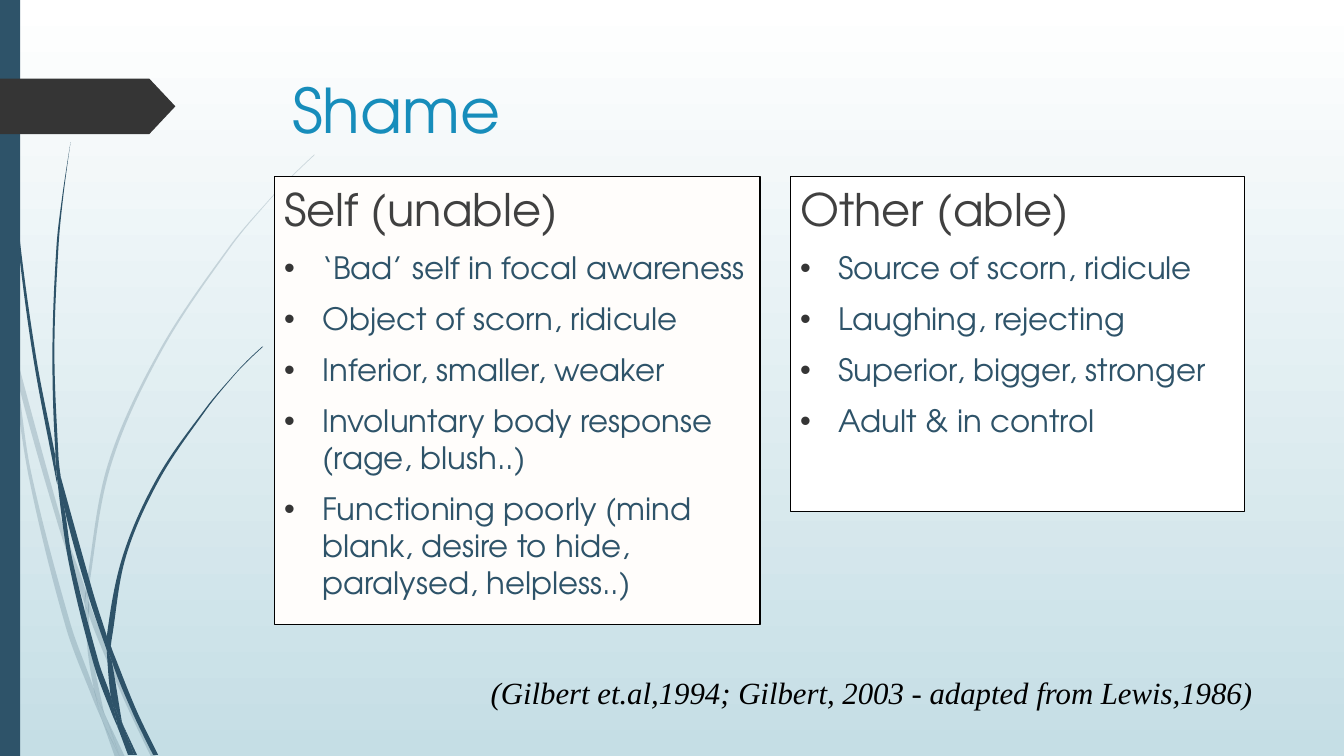
from dataclasses import dataclass

from lxml import etree
from pptx import Presentation
from pptx.dml.color import RGBColor
from pptx.enum.shapes import MSO_SHAPE
from pptx.enum.text import MSO_ANCHOR, PP_ALIGN
from pptx.oxml.ns import qn
from pptx.util import Emu, Pt

PX = 9144  # 100 px to the inch
HIGH = 750
WIDE = HIGH * 16 / 9
RECT, ARROW = MSO_SHAPE.RECTANGLE, MSO_SHAPE.PENTAGON
TOP, LEFT, RIGHT = MSO_ANCHOR.TOP, PP_ALIGN.LEFT, PP_ALIGN.RIGHT


@dataclass(frozen=True)
class Theme:
    sans: str = "TeX Gyre Adventor"
    serif: str = "Times New Roman"
    sky: tuple = ("FFFFFF", "C5DEE5")
    navy: str = "2E5369"
    coal: str = "353535"
    blue: str = "178DBB"
    gray: str = "404040"
    black: str = "000000"
    cream: str = "FFFDFB"
    white: str = "FFFFFF"
    title: int = 44
    head: int = 32
    body: int = 22


THEME = Theme()

# Blades of grass: each outline is a ring of (x, y) knots
PALE = [
    [(11, 350), (9, 322), (0, 282), (0, 299), (10, 344)],
    [(58, 522), (84, 599), (85, 586), (62, 520), (14, 345), (17, 376)],
    [(92, 607), (88, 596), (88, 610), (123, 694), (150, 751), (155, 751),
     (127, 692)],
    [(119, 751), (124, 751), (105, 711)],
    [(93, 683), (70, 619), (31, 469), (17, 376), (11, 350), (28, 470),
     (65, 621), (92, 693), (101, 714), (99, 707)],
    [(84, 599), (87, 646), (93, 683), (96, 692), (105, 711), (103, 706),
     (91, 646), (88, 610), (88, 608)],
    [(88, 584), (110, 462), (160, 349), (229, 245), (268, 198), (290, 175),
     (312, 154), (312, 153), (289, 175), (268, 197), (228, 244), (158, 348),
     (107, 461), (85, 584), (85, 586), (88, 596)],
    [(101, 714), (114, 751), (119, 751)],
    [(88, 608), (88, 610), (88, 596), (85, 586), (84, 599)],
    [(96, 692), (93, 683), (99, 707), (101, 714), (119, 751), (105, 711)],
]
DARK = [
    [(7, 110), (17, 233), (33, 355), (56, 477), (57, 481), (55, 457),
     (55, 453), (36, 355), (19, 232), (8, 109), (5, 48), (4, 0), (3, 0),
     (4, 48)],
    [(88, 592), (106, 645), (106, 633), (106, 631), (93, 590), (60, 472),
     (64, 505)],
    [(113, 649), (110, 641), (111, 656), (132, 708), (152, 749), (157, 749),
     (136, 706)],
    [(110, 691), (98, 657), (72, 556), (64, 505), (57, 477), (68, 557),
     (93, 659), (111, 708), (117, 722), (116, 717)],
    [(60, 472), (58, 453), (54, 349), (58, 245), (63, 193), (70, 141),
     (62, 193), (56, 245), (52, 349), (55, 449)],
    [(133, 749), (136, 749), (122, 719)],
    [(57, 477), (64, 505), (60, 472), (55, 449), (55, 453)],
    [(111, 633), (125, 552), (158, 476), (205, 406), (231, 374), (245, 359),
     (261, 344), (260, 344), (245, 358), (231, 373), (204, 405), (156, 474),
     (122, 551), (106, 631), (110, 641)],
    [(117, 722), (127, 749), (131, 749)],
    [(106, 645), (110, 691), (116, 706), (122, 719), (121, 716), (111, 656),
     (109, 651)],
    [(106, 645), (109, 651), (111, 656), (110, 641), (106, 631), (106, 633)],
    [(116, 706), (110, 691), (116, 717), (117, 722), (130, 749), (133, 749),
     (122, 719)],
]

SELF = [
    "‘Bad’ self in focal awareness",
    "Object of scorn, ridicule",
    "Inferior, smaller, weaker",
    "Involuntary body response (rage, blush..)",
    "Functioning poorly (mind blank, desire to hide, paralysed, helpless..)",
]
OTHER = [
    "Source of scorn, ridicule",
    "Laughing, rejecting",
    "Superior, bigger, stronger",
    "Adult & in control",
]


def emu(*nums):
    return [Emu(round(n * PX)) for n in nums]


def rgb(code):
    return RGBColor.from_string(code)


def paint(shape, fill, line=None):
    shape.shadow.inherit = False
    shape.fill.solid()
    shape.fill.fore_color.rgb = rgb(fill)
    if line:
        shape.line.color.rgb = rgb(line)
        shape.line.width = Pt(0.75)
    else:
        shape.line.fill.background()
    return shape


def block(slide, kind, box, fill, line=None):
    return paint(slide.shapes.add_shape(kind, *emu(*box)), fill, line)


def write(para, text, size, color, font=THEME.sans, italic=False, align=LEFT):
    para.alignment = align
    run = para.add_run()
    run.text = text
    run.font.name, run.font.size = font, Pt(size)
    run.font.color.rgb, run.font.italic = rgb(color), italic


def bullet(para, color):
    props = para._p.get_or_add_pPr()
    indent = 38 * PX
    props.set("marL", str(indent))
    props.set("indent", str(-indent))
    tint = etree.SubElement(props, qn("a:buClr"))
    etree.SubElement(tint, qn("a:srgbClr"), val=color)
    etree.SubElement(props, qn("a:buFont"), typeface="Arial")
    etree.SubElement(props, qn("a:buChar"), char="•")


def slope(last, here, after):
    """Unit direction of the outline at a knot, or 0 at a sharp corner."""
    into, out = here - last, after - here
    if (into * out.conjugate()).real < 0.8 * abs(into) * abs(out):
        return 0
    return (after - last) / abs(after - last)


def bend(shape, ring):
    """Turn the straight sides of a closed outline into curves."""
    knots = [complex(x, y) * PX for x, y in ring]
    base = complex(shape.left, shape.top)
    count = len(knots)
    ways = [slope(knots[i - 1], knots[i], knots[(i + 1) % count])
            for i in range(count)]
    for i, side in enumerate(list(shape._element.iter(qn("a:lnTo")))):
        j = (i + 1) % count
        reach = abs(knots[j] - knots[i]) / 3
        side.tag = qn("a:cubicBezTo")
        for n, grip in enumerate((knots[i] + ways[i] * reach,
                                  knots[j] - ways[j] * reach)):
            spot = grip - base
            side.insert(n, etree.Element(
                qn("a:pt"), x=str(round(spot.real)), y=str(round(spot.imag))))


def blade(group, ring, alpha):
    points = [emu(*knot) for knot in ring]
    pen = group.shapes.build_freeform(*points[0], scale=1.0)
    pen.add_line_segments(points[1:] + points[:1], close=True)
    shape = paint(pen.convert_to_shape(), THEME.navy)
    if alpha < 100:
        tint = next(shape._element.spPr.iter(qn("a:srgbClr")))
        etree.SubElement(tint, qn("a:alpha"), val=str(alpha * 1000))
    bend(shape, ring)


def scene(slide):
    fill = slide.background.fill
    fill.gradient()
    fill.gradient_angle = 270
    for stop, color in zip(fill.gradient_stops, THEME.sky):
        stop.color.rgb = rgb(color)
    for rings, alpha in ((PALE, 20), (DARK, 100)):
        group = slide.shapes.add_group_shape()
        for ring in rings:
            blade(group, ring, alpha)
    block(slide, RECT, (0, 0, 20, HIGH), THEME.navy)
    arrow = block(slide, ARROW, (0, 78, 174, 55), THEME.coal)
    arrow.adjustments[0] = 0.47


def label(slide, box, text, wrap=True, **style):
    frame = slide.shapes.add_textbox(*emu(*box)).text_frame
    frame.word_wrap = wrap
    write(frame.paragraphs[0], text, **style)


def panel(slide, box, fill, head, items):
    frame = block(slide, RECT, box, fill, THEME.black).text_frame
    frame.word_wrap, frame.vertical_anchor = True, TOP
    rows = [(head, THEME.head, THEME.gray)]
    rows += [(item, THEME.body, THEME.navy) for item in items]
    for i, row in enumerate(rows):
        para = frame.add_paragraph() if i else frame.paragraphs[0]
        para.space_before = Pt(10)
        if i:
            bullet(para, THEME.coal)
        write(para, *row)


def main():
    deck = Presentation()
    deck.slide_width, deck.slide_height = emu(WIDE, HIGH)
    slide = deck.slides.add_slide(deck.slide_layouts[6])
    scene(slide)
    label(slide, (280, 66, 1029, 109), "Shame",
          size=THEME.title, color=THEME.blue)
    panel(slide, (272, 175, 482, 445), THEME.cream, "Self (unable)", SELF)
    panel(slide, (784, 175, 451, 332), THEME.white, "Other (able)", OTHER)
    label(slide, (460, 663, 792, 47),
          "(Gilbert et.al,1994; Gilbert, 2003 - adapted from Lewis,1986)",
          wrap=False, size=THEME.body, color=THEME.black,
          font=THEME.serif, italic=True, align=RIGHT)
    deck.save("out.pptx")


if __name__ == "__main__":
    main()
